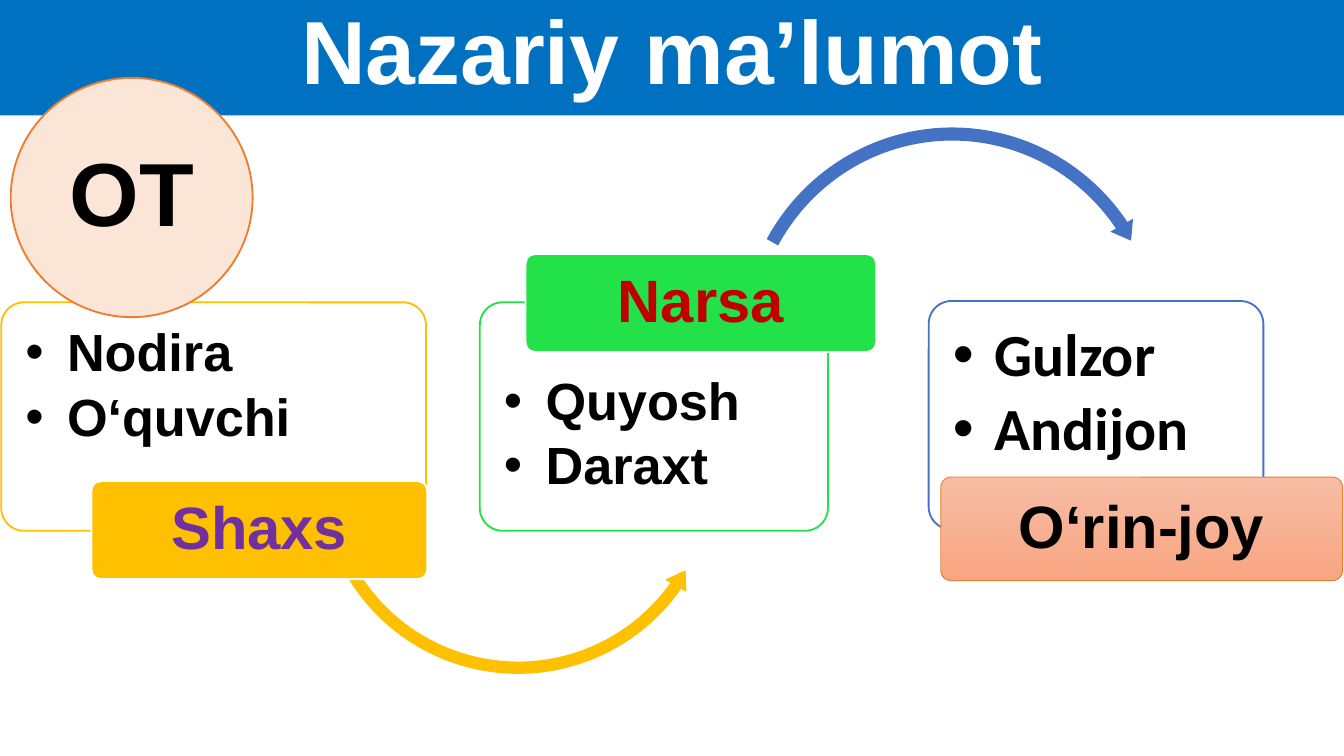
from lxml.etree import SubElement
from pptx import Presentation
from pptx.dml.color import RGBColor
from pptx.enum.shapes import MSO_SHAPE
from pptx.enum.text import MSO_ANCHOR, PP_ALIGN
from pptx.oxml.ns import qn
from pptx.util import Inches, Pt

COLORS = {
    "white": "FFFFFF", "black": "000000", "blue": "0070C0", "amber": "FFC000",
    "green": "23E148", "indigo": "4472C4", "purple": "7030A0", "red": "C00000",
    "orange": "ED7D31", "cream": "FBE5D6", "peach": "F7BDA5", "salmon": "F8A582",
}
CELL = 0.25  # inches; the slide is 40 columns by 22.5 rows


class Board:
    """Holds the current slide and draws its elements on the grid."""

    def __init__(self, slide):
        self.slide = slide

    def color(self, name):
        return RGBColor.from_string(COLORS[name])

    def block(self, preset, place, fill, line=None, width=1, adjust=()):
        block = self.slide.shapes.add_shape(preset, *(Inches(n * CELL) for n in place))
        block.shadow.inherit = False
        for index, value in enumerate(adjust):
            block.adjustments[index] = value
        if isinstance(fill, tuple):
            block.fill.gradient()
            block.fill.gradient_angle = 270
            for stop, name in zip(block.fill.gradient_stops, fill):
                stop.color.rgb = self.color(name)
        else:
            block.fill.solid()
            block.fill.fore_color.rgb = self.color(fill)
        if line:
            block.line.color.rgb = self.color(line)
            block.line.width = Pt(width)
        else:
            block.line.fill.background()
        return block

    def set_text(self, block, lines, size, color="black", font="Arial",
                 align=PP_ALIGN.CENTER, anchor=MSO_ANCHOR.MIDDLE, insets=(0, 0)):
        frame = block.text_frame
        frame.word_wrap = True
        frame.vertical_anchor = anchor
        frame.margin_left = frame.margin_right = Inches(insets[0])
        frame.margin_top, frame.margin_bottom = Inches(insets[1]), 0
        frame.text = "\n".join(lines)
        for paragraph in frame.paragraphs:
            paragraph.alignment = align
            paragraph.line_spacing = 0.9
            paragraph.font.name = font
            paragraph.font.size = Pt(size)
            paragraph.font.bold = True
            paragraph.font.color.rgb = self.color(color)
        return frame.paragraphs

    def title(self, text, place):
        self.set_text(self.block(MSO_SHAPE.RECTANGLE, place, "blue"), [text], 48, "white")

    def card(self, words, place, line, size=28, font="Arial", top=0.13):
        card = self.block(MSO_SHAPE.ROUNDED_RECTANGLE, place, "white", line, adjust=[0.1])
        for paragraph in self.set_text(card, words, size, font=font, align=PP_ALIGN.LEFT,
                                       anchor=MSO_ANCHOR.TOP, insets=(0.13, top)):
            paragraph.space_after = Pt(round(size * 0.16, 1))
            properties = paragraph._p.get_or_add_pPr()
            properties.set("marL", str(Inches(0.31)))
            properties.set("indent", str(-Inches(0.31)))
            bullet_font = SubElement(properties, qn("a:buFont"))
            bullet_font.set("typeface", "Arial")
            SubElement(properties, qn("a:buChar")).set("char", "•")
            # The schema wants the default run properties after the bullet
            properties.append(properties.find(qn("a:defRPr")))

    def label(self, text, place, fill, color, line="white", width=1):
        label = self.block(MSO_SHAPE.ROUNDED_RECTANGLE, place, fill, line, width, [0.1])
        self.set_text(label, [text], 32, color)

    def arrow(self, preset, place, fill, adjust):
        self.block(preset, place, fill, adjust=adjust)

    def badge(self, text, place):
        self.set_text(self.block(MSO_SHAPE.OVAL, place, "cream", "orange"), [text], 48)


def main():
    deck = Presentation()
    deck.slide_width, deck.slide_height = Inches(40 * CELL), Inches(22.5 * CELL)
    board = Board(deck.slides.add_slide(deck.slide_layouts[6]))

    board.title("Nazariy ma’lumot", (0, -0.16, 40, 3.6))

    # Persons
    board.card(["Nodira", "O‘quvchi"], (0.04, 9, 12.64, 6.8), "amber")
    board.arrow(MSO_SHAPE.LEFT_CIRCULAR_ARROW, (9.32, 8.04, 12.2, 12.2), "amber",
                (0.03, 3.3, 21.06, 90.25, 0.03))
    board.label("Shaxs", (2.72, 14.32, 10, 2.92), "amber", "purple")

    # Things
    board.card(["Quyosh", "Daraxt"], (14.28, 9, 10.36, 6.8), "green", top=0.49)
    board.arrow(MSO_SHAPE.CIRCULAR_ARROW, (21.84, 3.6, 13, 13.24), "indigo",
                (0.03, 3.02, 195.07, 125.61, 0.03))
    board.label("Narsa", (15.64, 7.56, 10.44, 2.92), "green", "red")

    # Places
    board.card(["Gulzor", "Andijon"], (27.64, 8.96, 9.96, 6.8), "indigo", 32, "Calibri")
    board.label("O‘rin-joy", (28, 14.2, 11.96, 3.08), ("peach", "salmon"), "black",
                "orange", 0.5)

    # Topic
    board.badge("OT", (0.32, 2.32, 7.2, 7.12))

    deck.save("out.pptx")


if __name__ == "__main__":
    main()
